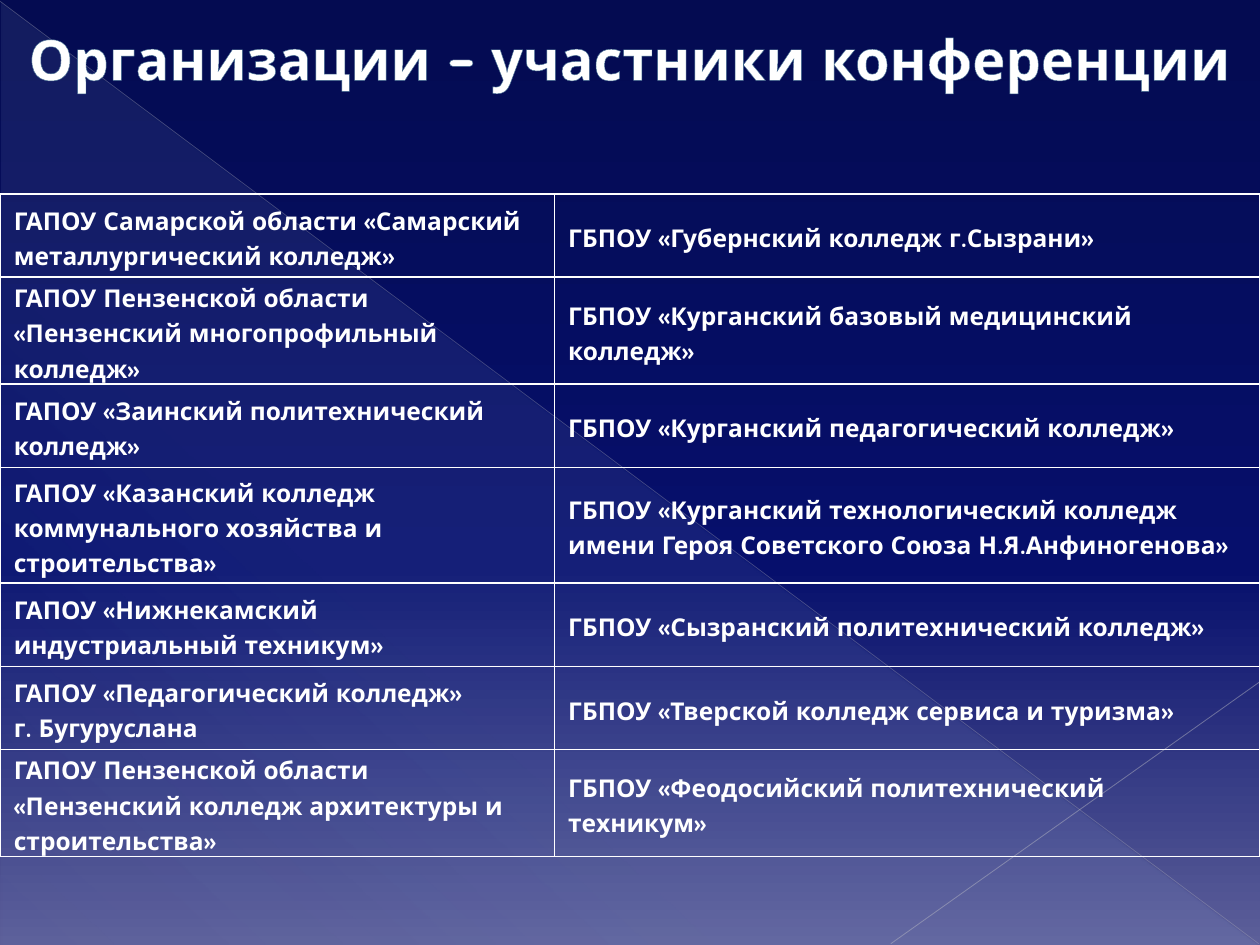
from dataclasses import dataclass

from lxml.etree import SubElement
from pptx import Presentation
from pptx.dml.color import RGBColor
from pptx.enum.shapes import MSO_CONNECTOR, MSO_SHAPE
from pptx.enum.text import MSO_ANCHOR, MSO_AUTO_SIZE, PP_ALIGN
from pptx.oxml import parse_xml
from pptx.oxml.ns import nsdecls, qn
from pptx.util import Inches, Pt


@dataclass(frozen=True)
class Theme:
    """Colours, type sizes and font of the slide."""
    font: str = "Quicksand"
    text: str = "FFFFFF"
    edge: str = "446D91"
    head: int = 32
    body: int = 14
    sky: tuple = ((0, "040B51", 100), (60, "060F6C", 100), (100, "5C5F99", 100))
    glow: tuple = ((0, "ACCBF9", 10), (70, "ACCBF9", 8), (100, "ACCBF9", 1))


THEME = Theme()
COLS = (4.4, 5.6)
ROWS = (
    (0.66, "ГАПОУ Самарской области «Самарский металлургический колледж»",
     "ГБПОУ «Губернский колледж г.Сызрани»"),
    (0.66, "ГАПОУ Пензенской области «Пензенский многопрофильный колледж»",
     "ГБПОУ «Курганский базовый медицинский колледж»"),
    (0.66, "ГАПОУ «Заинский политехнический колледж»",
     "ГБПОУ «Курганский педагогический колледж»"),
    (0.92, "ГАПОУ «Казанский колледж коммунального хозяйства и строительства»",
     "ГБПОУ «Курганский технологический колледж имени Героя Советского Союза "
     "Н.Я.Анфиногенова»"),
    (0.66, "ГАПОУ «Нижнекамский индустриальный техникум»",
     "ГБПОУ «Сызранский политехнический колледж»"),
    (0.66, "ГАПОУ «Педагогический колледж» \nг. Бугуруслана",
     "ГБПОУ «Тверской колледж сервиса и туризма»"),
    (0.79, "ГАПОУ Пензенской области «Пензенский колледж архитектуры и строительства»",
     "ГБПОУ «Феодосийский политехнический техникум»"),
)


def blend(root, stops, angle):
    """Replace the solid fill under root with a gradient."""
    marks = "".join(
        f'<a:gs pos="{pos * 1000}"><a:srgbClr val="{tone}">'
        f'<a:alpha val="{alpha * 1000}"/></a:srgbClr></a:gs>'
        for pos, tone, alpha in stops)
    grad = parse_xml(
        f'<a:gradFill {nsdecls("a")} rotWithShape="1"><a:gsLst>{marks}</a:gsLst>'
        f'<a:lin ang="{angle * 60000}" scaled="0"/></a:gradFill>')
    old = next(root.iter(qn("a:solidFill")))
    old.getparent().replace(old, grad)


def write(para, text, size):
    """Add text to a paragraph as one run per line."""
    for step, part in enumerate(text.split("\n")):
        if step:
            para.add_line_break()
        run = para.add_run()
        run.text = part
        font = run.font
        font.name, font.size, font.bold = THEME.font, Pt(size), True
        font.color.rgb = RGBColor.from_string(THEME.text)
    return run


def add_ray(slide, start, end, tone, width, alpha):
    """Draw a thin translucent line."""
    ray = slide.shapes.add_connector(
        MSO_CONNECTOR.STRAIGHT, *map(Inches, start + end))
    ray.line.width = Pt(width)
    ray.line.color.rgb = RGBColor.from_string(tone)
    props = ray.element.spPr
    SubElement(next(props.iter(qn("a:srgbClr"))), qn("a:alpha"), val=str(alpha * 1000))
    SubElement(props, qn("a:effectLst"))


def add_decor(slide, left, top, width, height):
    """Paint the backdrop, its pale triangle and two rays."""
    back = slide.background
    back.fill.solid()
    blend(slide.element, THEME.sky, 90)
    wedge = slide.shapes.add_shape(
        MSO_SHAPE.RIGHT_TRIANGLE, Inches(left + 0.01), Inches(top + 0.02),
        Inches(width - 0.02), Inches(height - 0.02))
    wedge.shadow.inherit = False
    wedge.line.fill.background()
    wedge.fill.solid()
    blend(wedge.element.spPr, THEME.glow, 133)
    right, base = left + width, top + height - 0.01
    add_ray(slide, (left, top + 0.01), (right - 0.01, base), "B2B3BE", 0.39, 35)
    add_ray(slide, (right, top + 5.41), (left + 7.07, base), "BBBCC5", 0.47, 45)


def add_title(slide, left, top, width, height):
    """Place the outlined heading above the decor."""
    title = slide.shapes.title
    title.element.getparent().append(title.element)
    title.left, title.top = Inches(left), Inches(top)
    title.width, title.height = Inches(width), Inches(height)
    frame = title.text_frame
    frame.word_wrap, frame.auto_size = True, MSO_AUTO_SIZE.NONE
    frame.vertical_anchor = MSO_ANCHOR.MIDDLE
    para = frame.paragraphs[0]
    para.alignment = PP_ALIGN.CENTER
    run = write(para, "Организации – участники конференции", THEME.head)
    run.font._element.insert(0, parse_xml(
        f'<a:ln {nsdecls("a")} w="{Pt(0.5)}"><a:solidFill>'
        f'<a:srgbClr val="{THEME.edge}"/></a:solidFill></a:ln>'))


def fill_cell(cell, text):
    """Write one clear cell with thin borders."""
    cell.vertical_anchor = MSO_ANCHOR.MIDDLE
    cell.margin_left = cell.margin_top = Inches(0.01)
    cell.margin_right, cell.margin_bottom = Inches(0.11), 0
    cell.fill.background()
    props = cell._tc.get_or_add_tcPr()
    for spot, side in enumerate("LRTB"):
        props.insert(spot, parse_xml(
            f'<a:ln{side} {nsdecls("a")} w="{Pt(1)}"><a:solidFill>'
            f'<a:srgbClr val="{THEME.text}"/></a:solidFill></a:ln{side}>'))
    para = cell.text_frame.paragraphs[0]
    para.alignment, para.line_spacing = PP_ALIGN.LEFT, 1.15
    form = para._p.get_or_add_pPr()
    form.set("marL", str(Inches(0.1)))
    form.set("indent", "0")
    write(para, text, THEME.body)


def add_list(slide, left, top, width, height):
    """Place the table of colleges."""
    table = slide.shapes.add_table(
        len(ROWS), len(COLS), *map(Inches, (left, top, width, height))).table
    table.first_row = table.horz_banding = False
    for col, span in zip(table.columns, COLS):
        col.width = Inches(span)
    for row, (tall, *names) in zip(table.rows, ROWS):
        row.height = Inches(tall)
        for cell, name in zip(row.cells, names):
            fill_cell(cell, name)


def main():
    """Build and save the slide."""
    deck = Presentation()
    deck.slide_width, deck.slide_height = Inches(10), Inches(7.5)
    slide = deck.slides.add_slide(deck.slide_layouts[5])
    add_decor(slide, 0, 0, 10, 7.5)
    add_title(slide, 0, 0, 10, 0.92)
    add_list(slide, 0, 1.54, 10, 5)
    deck.save("out.pptx")


if __name__ == "__main__":
    main()
